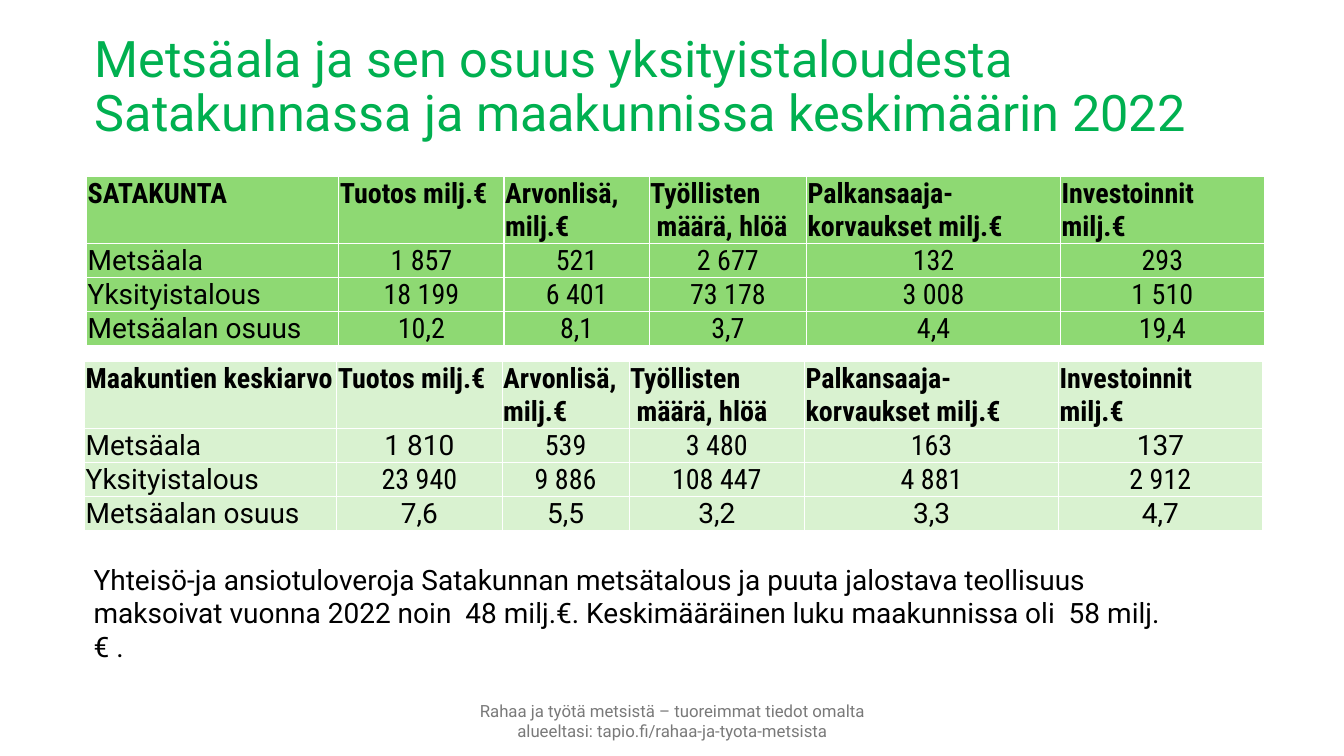
import pptx
import pptx.dml.color
import pptx.enum.text
import pptx.oxml
import pptx.oxml.ns
import pptx.util
from dataclasses import dataclass

Inches = pptx.util.Inches
Align = pptx.enum.text.PP_ALIGN
Anchor = pptx.enum.text.MSO_ANCHOR


@dataclass(frozen=True)
class Theme:
    regular: str = "Roboto"
    condensed: str = "Roboto Condensed"
    title_color: str = "00B050"
    text_color: str = "000000"
    footer_color: str = "797979"
    border_color: str = "FFFFFF"
    region_fill: str = "8ED973"
    average_fill: str = "D9F2D0"
    title_size: int = 36
    text_size: int = 20
    footer_size: int = 12


THEME = Theme()

TITLE = [
    "Metsäala ja sen osuus yksityistaloudesta",
    "Satakunnassa ja maakunnissa keskimäärin 2022",
]
TAX_NOTE = (
    "Yhteisö-ja ansiotuloveroja Satakunnan metsätalous ja puuta jalostava teollisuus "
    "maksoivat vuonna 2022 noin  48 milj.€. Keskimääräinen luku maakunnissa oli  58 milj.€ ."
)
FOOTER = (
    "Rahaa ja työtä metsistä – tuoreimmat tiedot omalta alueeltasi: "
    "tapio.fi/rahaa-ja-tyota-metsista"
)
MEASURES = [
    ["Tuotos milj.€"],
    ["Arvonlisä, milj.€"],
    ["Työllisten", " määrä, hlöä"],
    ["Palkansaaja-korvaukset milj.€"],
    ["Investoinnit", "milj.€"],
]
TABLES = [
    {
        "name": "SATAKUNTA",
        "position": (0.86, 1.75),
        "columns": [2.5, 1.64, 1.44, 1.56, 2.52, 2.02],
        "fill": THEME.region_fill,
        "regular_cells": set(),
        "rows": [
            ("Metsäala", "1 857", "521", "2 677", "132", "293"),
            ("Yksityistalous", "18 199", "6 401", "73 178", "3 008", "1 510"),
            ("Metsäalan osuus", "10,2", "8,1", "3,7", "4,4", "19,4"),
        ],
    },
    {
        "name": "Maakuntien keskiarvo",
        "position": (0.84, 3.59),
        "columns": [2.5, 1.64, 1.26, 1.74, 2.52, 2.02],
        "fill": THEME.average_fill,
        "regular_cells": {(1, 1), (1, 5), (3, 1), (3, 2), (3, 3), (3, 4), (3, 5)},
        "rows": [
            ("Metsäala", "1 810", "539", "3 480", "163", "137"),
            ("Yksityistalous", "23 940", "9 886", "108 447", "4 881", "2 912"),
            ("Metsäalan osuus", "7,6", "5,5", "3,2", "3,3", "4,7"),
        ],
    },
]
HEADER_HEIGHT, ROW_HEIGHT = 0.66, 0.33
CELL_MARGINS = {
    "margin_left": Inches(0.01),
    "margin_right": Inches(0.01),
    "margin_top": Inches(0.01),
    "margin_bottom": 0,
}


def set_all(target, formats):
    for attribute, value in formats.items():
        setattr(target, attribute, value)


def rgb(color):
    return pptx.dml.color.RGBColor.from_string(color)


def write(text_frame, lines, font, size, color, bold=False, **paragraph_format):
    for index, line in enumerate(lines):
        paragraph = text_frame.paragraphs[0] if index == 0 else text_frame.add_paragraph()
        set_all(paragraph, paragraph_format)
        run = paragraph.add_run()
        run.text = line
        set_all(run.font, {"name": font, "size": pptx.util.Pt(size), "bold": bold})
        run.font.color.rgb = rgb(color)


def place(shape, left, top, width, height):
    set_all(shape, {
        "left": Inches(left), "top": Inches(top),
        "width": Inches(width), "height": Inches(height),
    })


def add_text(slide, box, anchor, lines, *style, **paragraph_format):
    text_box = slide.shapes.add_textbox(*map(Inches, box))
    set_all(text_box.text_frame, {"word_wrap": True, "vertical_anchor": anchor})
    write(text_box.text_frame, lines, *style, **paragraph_format)


def add_borders(cell):
    properties = cell._tc.get_or_add_tcPr()
    for side in ("lnL", "lnR", "lnT", "lnB"):
        properties.append(pptx.oxml.parse_xml(
            f'<a:{side} {pptx.oxml.ns.nsdecls("a")} w="12700"><a:solidFill>'
            f'<a:srgbClr val="{THEME.border_color}"/></a:solidFill></a:{side}>'
        ))


def add_economy_table(slide, content):
    header = [[content["name"]]] + MEASURES
    rows = [header] + [[[value] for value in row] for row in content["rows"]]
    heights = [HEADER_HEIGHT] + [ROW_HEIGHT] * len(content["rows"])
    size = (sum(content["columns"]), sum(heights))
    table = slide.shapes.add_table(
        len(rows), len(header), *map(Inches, content["position"] + size)
    ).table
    set_all(table, {"first_row": False, "horz_banding": False})
    for column, width in zip(table.columns, content["columns"]):
        column.width = Inches(width)
    for row, height in zip(table.rows, heights):
        row.height = Inches(height)
    for row_index, row in enumerate(rows):
        for column_index, lines in enumerate(row):
            is_header, is_label = row_index == 0, column_index == 0
            is_regular = (row_index, column_index) in content["regular_cells"]
            is_regular = is_regular or (is_label and not is_header)
            cell = table.cell(row_index, column_index)
            set_all(cell, CELL_MARGINS)
            cell.vertical_anchor = Anchor.TOP if is_header else Anchor.BOTTOM
            add_borders(cell)
            cell.fill.solid()
            cell.fill.fore_color.rgb = rgb(content["fill"])
            write(
                cell.text_frame, lines,
                THEME.regular if is_regular else THEME.condensed,
                THEME.text_size, THEME.text_color, bold=is_header,
                alignment=Align.LEFT if is_header or is_label else Align.CENTER,
            )


def main():
    presentation = pptx.Presentation()
    set_all(presentation, {"slide_width": Inches(13.33), "slide_height": Inches(7.5)})
    slide = presentation.slides.add_slide(presentation.slide_layouts[5])
    title = slide.shapes.title
    place(title, 0.84, 0.15, 12.19, 1.45)
    set_all(title.text_frame, {
        "word_wrap": True,
        "vertical_anchor": Anchor.MIDDLE,
        "auto_size": pptx.enum.text.MSO_AUTO_SIZE.NONE,
    })
    write(
        title.text_frame, TITLE, THEME.regular, THEME.title_size, THEME.title_color,
        alignment=Align.LEFT, line_spacing=0.9, space_before=0,
    )
    for content in TABLES:
        add_economy_table(slide, content)
    add_text(
        slide, (0.83, 5.53, 10.9, 0.77), Anchor.TOP, [TAX_NOTE],
        THEME.regular, THEME.text_size, THEME.text_color,
    )
    add_text(
        slide, (4.32, 6.95, 4.7, 0.4), Anchor.MIDDLE, [FOOTER],
        THEME.regular, THEME.footer_size, THEME.footer_color, alignment=Align.CENTER,
    )
    presentation.save("out.pptx")


if __name__ == "__main__":
    main()
